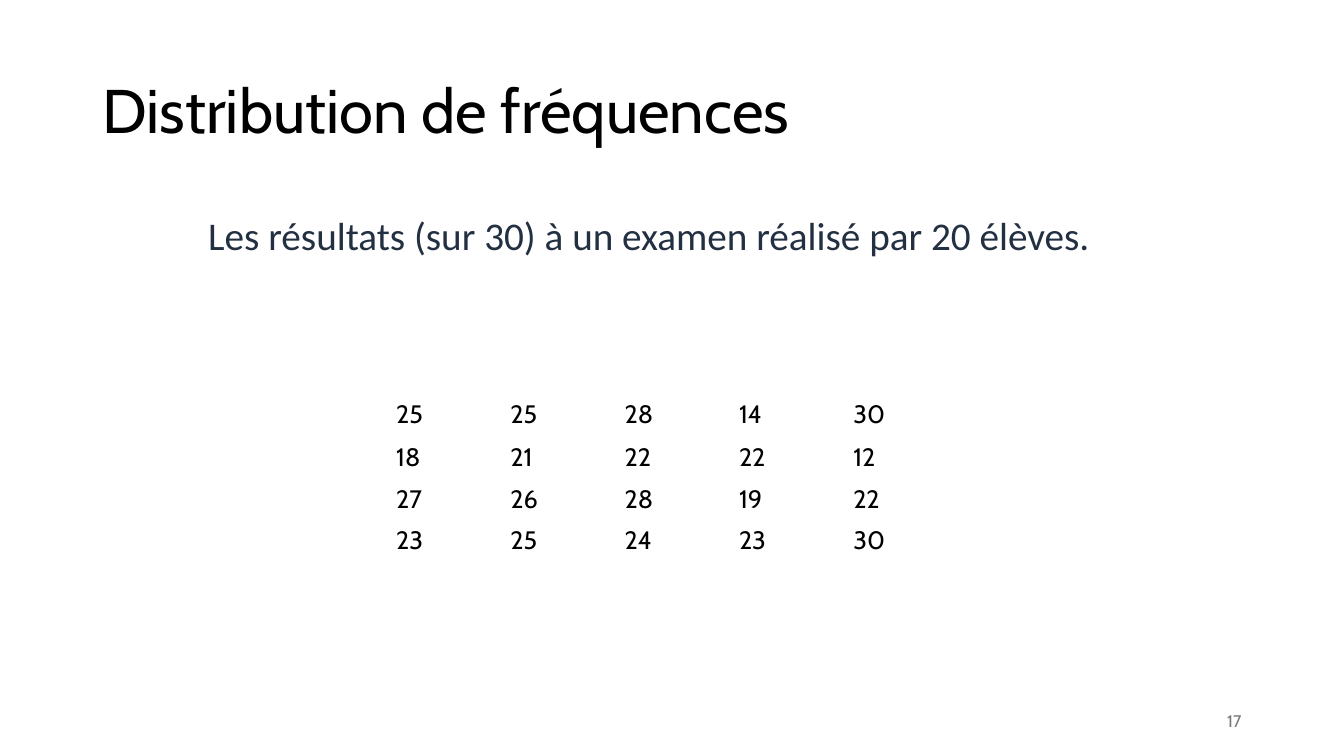
import pptx
import pptx.util
import pptx.dml.color
import pptx.enum.text
import lxml.etree

Cm = pptx.util.Cm
ALIGN = pptx.enum.text.PP_ALIGN
ANCHOR = pptx.enum.text.MSO_ANCHOR

HEADING = "Distribution de fréquences"
INTRO = "Les résultats (sur 30) à un examen réalisé par 20 élèves."
RESULTS = [
    (25, 25, 28, 14, 30),
    (18, 21, 22, 22, 12),
    (27, 26, 28, 19, 22),
    (23, 25, 24, 23, 30),
]
PAGE = "17"
COLORS = {"ink": "000000", "intro": "223042", "page": "797979", "paper": "FFFFFF"}
COLUMN_WIDTH = Cm(2.88)
ROW_HEIGHTS = [Cm(1.09)] + [Cm(1.04)] * (len(RESULTS) - 1)


def write(frame, text, size=18, font="Cabin", color="ink", align=ALIGN.LEFT,
          spacing=1.0, before=0):
    paragraph = frame.paragraphs[0]
    paragraph.alignment = align
    paragraph.line_spacing = spacing
    paragraph.space_before = pptx.util.Pt(before)
    run = paragraph.add_run()
    run.text = text
    run.font.size = pptx.util.Pt(size)
    run.font.name = font
    run.font.bold = False
    run.font.color.rgb = pptx.dml.color.RGBColor.from_string(COLORS[color])
    return paragraph


def place(part, left, top, width, height, anchor):
    part.left, part.top, part.width, part.height = map(Cm, (left, top, width, height))
    part.text_frame.word_wrap = True
    part.text_frame.auto_size = pptx.enum.text.MSO_AUTO_SIZE.NONE
    part.text_frame.vertical_anchor = anchor
    return part.text_frame


def main():
    deck = pptx.Presentation()
    deck.slide_width, deck.slide_height = Cm(33.87), Cm(19.05)
    slide = deck.slides.add_slide(deck.slide_layouts[1])
    slide.background.fill.solid()
    slide.background.fill.fore_color.rgb = pptx.dml.color.RGBColor.from_string(COLORS["paper"])

    heading = place(slide.shapes.title, 2.33, 1.01, 29.21, 3.68, ANCHOR.MIDDLE)
    write(heading, HEADING, size=44, spacing=0.9)

    intro = place(slide.placeholders[1], 2.33, 5.33, 28.04, 2.24, ANCHOR.TOP)
    intro_line = write(intro, INTRO, size=28, font="Calibri", color="intro",
                       align=ALIGN.CENTER, spacing=0.9, before=10)
    properties = intro_line._p.get_or_add_pPr()
    properties.set("marL", "0")
    properties.set("indent", "0")
    lxml.etree.SubElement(properties, pptx.oxml.ns.qn("a:buNone"))

    results = slide.shapes.add_table(
        len(RESULTS), len(RESULTS[0]), Cm(9.73), Cm(9.93),
        COLUMN_WIDTH * len(RESULTS[0]), sum(ROW_HEIGHTS)).table
    results.first_row = False
    results.horz_banding = False
    for column in results.columns:
        column.width = COLUMN_WIDTH
    for row, height, marks in zip(results.rows, ROW_HEIGHTS, RESULTS):
        row.height = height
        for cell, mark in zip(row.cells, marks):
            cell.fill.background()
            write(cell.text_frame, str(mark))

    page = slide.shapes.add_textbox(0, 0, 0, 0)
    write(place(page, 23.92, 17.66, 7.62, 1.01, ANCHOR.MIDDLE), PAGE,
          size=12, color="page", align=ALIGN.RIGHT)

    deck.save("out.pptx")


if __name__ == "__main__":
    main()
